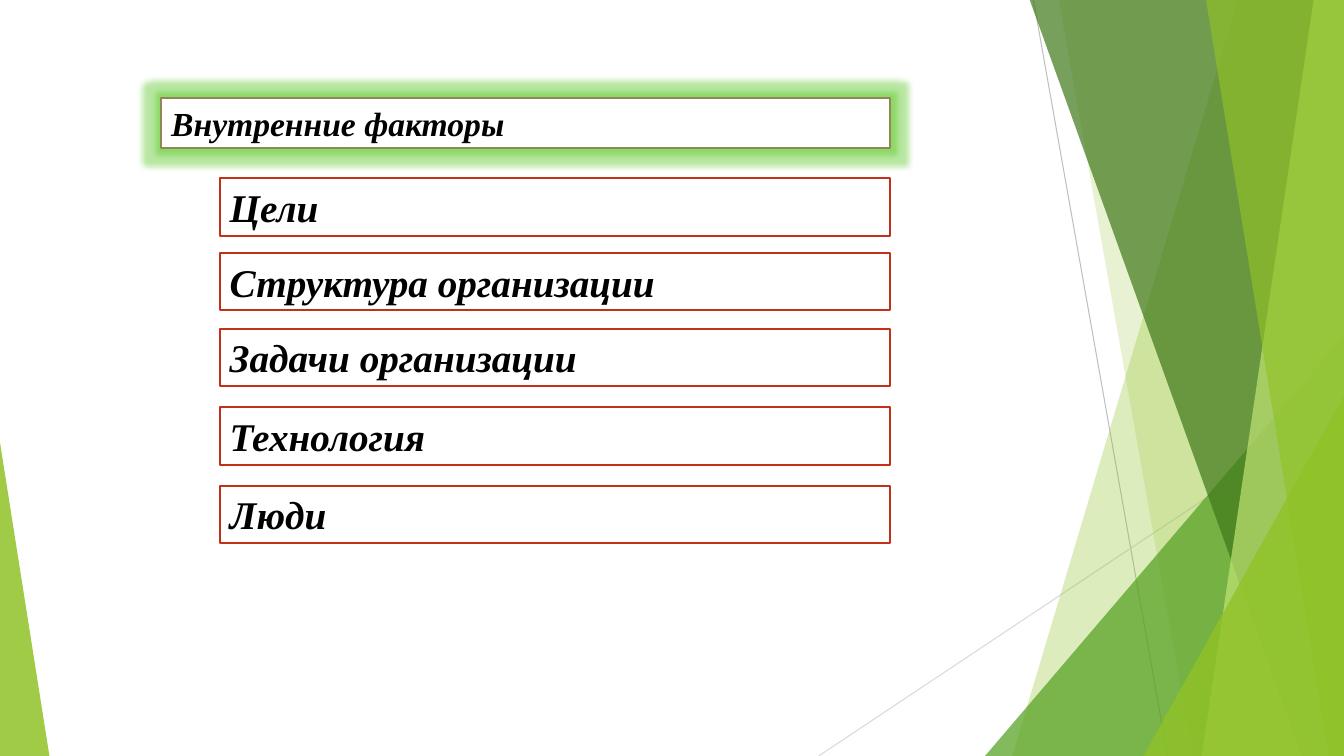
from pptx import Presentation
from pptx.util import Inches, Pt
from pptx.dml.color import RGBColor as RGB
from pptx.enum.shapes import MSO_SHAPE as SHAPE, MSO_CONNECTOR as LINK
from pptx.enum.text import MSO_ANCHOR as ANCHOR, MSO_AUTO_SIZE as AUTO, PP_ALIGN as ALIGN
from pptx.oxml.ns import qn
from lxml.etree import SubElement as Sub

WIDE, HIGH = 13.33, 7.5
FONT = "Times New Roman"
HUES = {
    "lime": "90C226", "green": "54A021", "dark": "3F7819", "pale": "C0E474",
    "gray": "BFBFBF", "mist": "D9D9D9", "olive": "918655", "red": "C42F1A",
    "white": "FFFFFF", "black": "000000", "glow": "4FC314",
}

# Content
HEAD = "Внутренние факторы"
ITEMS = [
    ("Цели", 1.77),
    ("Структура организации", 2.51),
    ("Задачи организации", 3.26),
    ("Технология", 4.04),
    ("Люди", 4.82),
]
RIGHT = 8.83  # shared right edge of all boxes

# Backdrop: thin lines, then bands and corners from back to front
LINES = [
    (10.25, 0, 11.58, HIGH, "gray"),
    (WIDE, 4.03, 8.12, HIGH, "mist"),
]
PARTS = [  # band: top x, bottom x; corner: left, width, height, apex
    ("band", (12.28, 10.04), "lime", 30),
    ("band", (10.5, 11.83), "lime", 20),
    ("corner", (9.77, 3.56, 4.17, 1), "green", 72),
    ("band", (10.21, 12.91), "dark", 70),
    ("band", (13.03, 11.92), "pale", 70),
    ("band", (11.96, 13.18), "lime", 65),
    ("corner", (11.34, 1.99, 3.57, 1), "lime", 80),
    ("corner", (0, 0.49, 3.11, 0), "lime", 85),
]


def hue(name):
    return RGB.from_string(HUES[name])


def band(shapes, top, base):
    """Fill from a slanted left edge to the right side of the slide."""
    dots = [(top, -0.01), (WIDE, -0.01), (WIDE, HIGH), (base, HIGH)]
    dots = [(Inches(x), Inches(y)) for x, y in dots]
    path = shapes.build_freeform(*dots[0], scale=1.0)
    path.add_line_segments(dots[1:], close=True)
    return path.convert_to_shape()


def corner(shapes, left, wide, high, apex):
    """Right triangle standing on the bottom of the slide."""
    box = [Inches(n) for n in (left, HIGH - high, wide, high)]
    shape = shapes.add_shape(SHAPE.ISOSCELES_TRIANGLE, *box)
    shape.adjustments[0] = apex
    return shape


def paint(shape, name, alpha=100):
    shape.shadow.inherit = False
    shape.fill.solid()
    shape.fill.fore_color.rgb = hue(name)
    if alpha < 100:
        tint = shape.element.spPr.find(qn("a:solidFill")).find(qn("a:srgbClr"))
        Sub(tint, qn("a:alpha"), val=str(alpha * 1000))


def label(shapes, text, left, top, high, edge, size):
    box = [Inches(n) for n in (left, top, RIGHT - left, high)]
    shape = shapes.add_shape(SHAPE.RECTANGLE, *box)
    paint(shape, "white")
    shape.line.color.rgb = hue(edge)
    shape.line.width = Pt(1.5)
    frame = shape.text_frame
    frame.text = text
    frame.word_wrap = True
    frame.auto_size = AUTO.SHAPE_TO_FIT_TEXT
    frame.vertical_anchor = ANCHOR.TOP
    para = frame.paragraphs[0]
    para.alignment = ALIGN.LEFT
    font = para.runs[0].font
    font.name, font.size = FONT, Pt(size)
    font.bold = font.italic = True
    font.color.rgb = hue("black")
    return shape


def glow(shape, name):
    fx = shape.element.spPr.find(qn("a:effectLst"))
    halo = Sub(fx, qn("a:glow"), rad=str(Pt(8)))
    tint = Sub(halo, qn("a:srgbClr"), val=HUES[name])
    Sub(tint, qn("a:alpha"), val="40000")


def main():
    deck = Presentation()
    deck.slide_width, deck.slide_height = Inches(WIDE), Inches(HIGH)
    shapes = deck.slides.add_slide(deck.slide_layouts[6]).shapes

    # Backdrop
    for *ends, name in LINES:
        line = shapes.add_connector(LINK.STRAIGHT, *[Inches(n) for n in ends])
        line.line.color.rgb = hue(name)
        line.line.width = Pt(0.75)
        Sub(line.element.spPr, qn("a:effectLst"))
    draw = {"band": band, "corner": corner}
    for kind, dims, name, alpha in PARTS:
        shape = draw[kind](shapes, *dims)
        paint(shape, name, alpha)
        shape.line.fill.background()

    # Heading and factors
    glow(label(shapes, HEAD, 1.6, 0.97, 0.5, "olive", 24), "glow")
    for text, top in ITEMS:
        label(shapes, text, 2.18, top, 0.57, "red", 28)

    deck.save("out.pptx")


if __name__ == "__main__":
    main()
